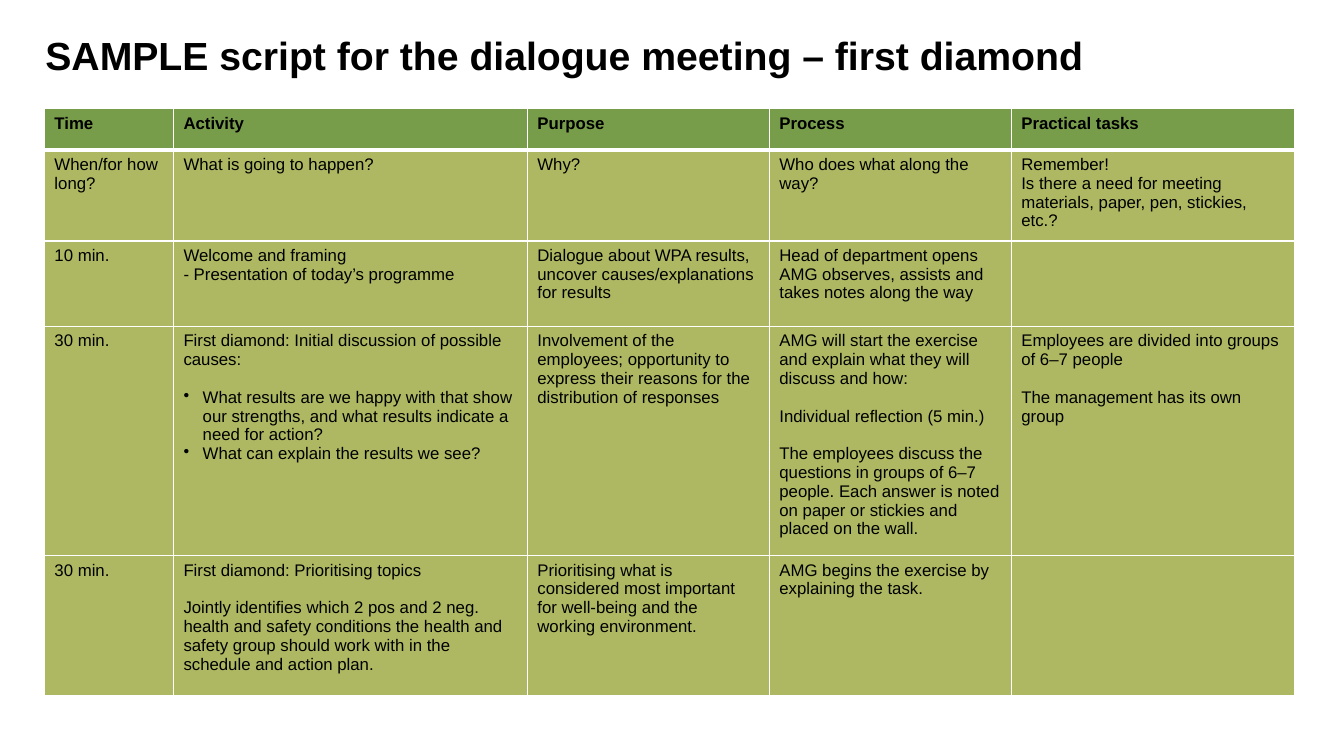
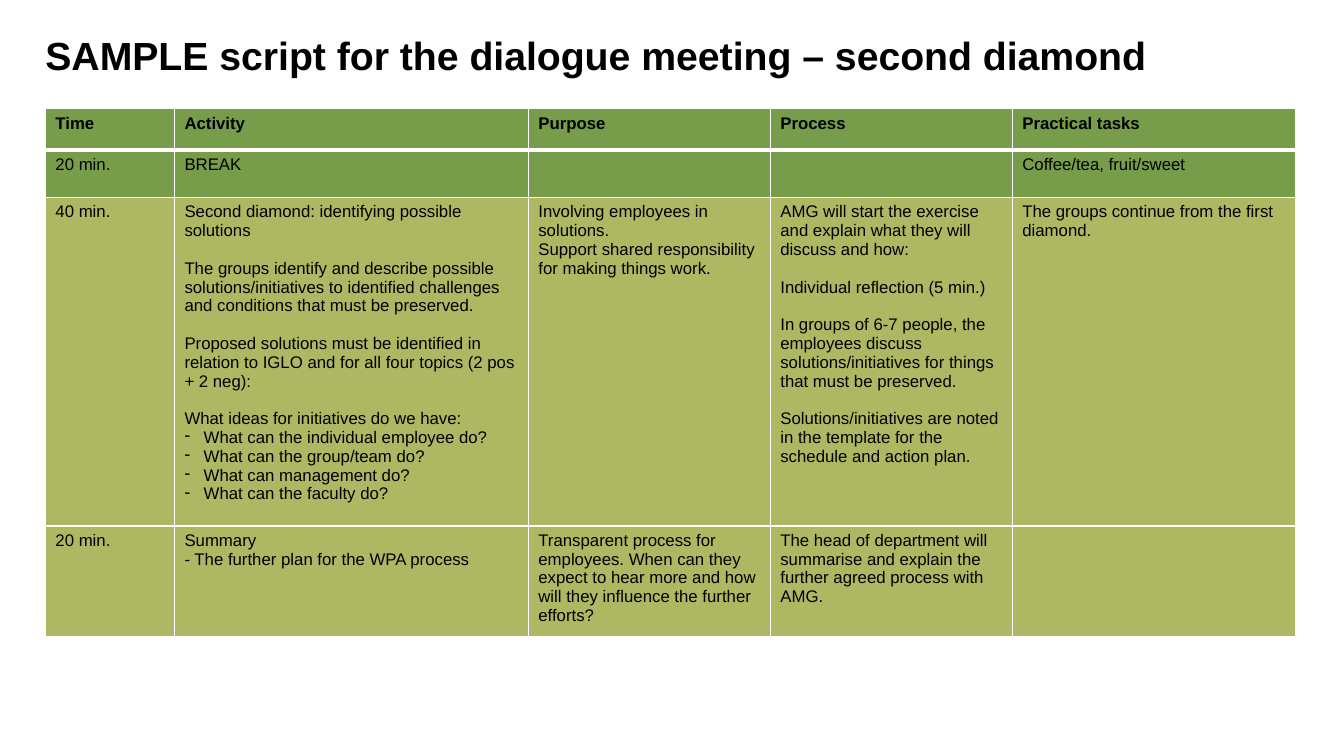
from dataclasses import dataclass

from lxml.etree import SubElement
from pptx import Presentation
from pptx.dml.color import RGBColor as Color
from pptx.enum.text import MSO_ANCHOR as Anchor
from pptx.oxml.ns import qn
from pptx.util import Inches, Pt


@dataclass(frozen=True)
class Theme:
    font: str = "Arial"
    text: str = "000000"
    border: str = "FFFFFF"
    dark_green: str = "789D4A"
    light_green: str = "AEB862"
    title_size: int = 28
    cell_size: int = 12
    paragraph_gap: float = 13.4
    thin_border: int = 1
    thick_border: int = 3


theme = Theme()


def format_runs(paragraph, size, bold):
    for run in paragraph.runs:
        run.font.name = theme.font
        run.font.size = Pt(size)
        run.font.bold = bold
        run.font.color.rgb = Color.from_string(theme.text)


def fill_cell(cell, content, bold):
    first = True
    for block in content.split("\n\n"):
        for index, line in enumerate(block.split("\n")):
            paragraph = cell.text_frame.paragraphs[0] if first else cell.text_frame.add_paragraph()
            if index == 0 and not first:
                paragraph.space_before = Pt(theme.paragraph_gap)
            first = False
            bullet, tab, text = line.rpartition("\t")
            if bullet:
                properties = paragraph._p.get_or_add_pPr()
                properties.set("marL", str(Inches(0.19)))
                properties.set("indent", str(-Inches(0.19)))
                SubElement(properties, qn("a:buChar"), char=bullet)
            paragraph.text = text
            format_runs(paragraph, theme.cell_size, bold)


HEADERS = ["Time", "Activity", "Purpose", "Process", "Practical tasks"]
COLUMN_WIDTHS = [1.28, 3.51, 2.4, 2.4, 2.81]
HEADER_HEIGHT = 0.41
EXERCISE_START = (
    "AMG will start the exercise and explain what they will discuss and how:\n\n"
    "Individual reflection (5 min.)\n\n"
)

meeting_parts = [
    {
        "name": "first diamond",
        "left": 0.44,
        "heights": [0.84, 0.85, 2.15, 1.39],
        "dark_rows": {0},
        "rows": [
            [
                "When/for how long?",
                "What is going to happen?",
                "Why?",
                "Who does what along the way?",
                "Remember!\nIs there a need for meeting materials, paper, pen, stickies, etc.?",
            ],
            [
                "10 min.",
                "Welcome and framing\n- Presentation of today’s programme",
                "Dialogue about WPA results, uncover causes/explanations for results",
                "Head of department opens\nAMG observes, assists and takes notes along the way",
                "",
            ],
            [
                "30 min.",
                "First diamond: Initial discussion of possible causes:\n\n"
                "•\tWhat results are we happy with that show our strengths, "
                "and what results indicate a need for action?\n"
                "•\tWhat can explain the results we see?",
                "Involvement of the employees; opportunity to express their reasons "
                "for the distribution of responses",
                EXERCISE_START + "The employees discuss the questions in groups of 6–7 people. "
                "Each answer is noted on paper or stickies and placed on the wall.",
                "Employees are divided into groups of 6–7 people\n\n"
                "The management has its own group",
            ],
            [
                "30 min.",
                "First diamond: Prioritising topics\n\n"
                "Jointly identifies which 2 pos and 2 neg. health and safety conditions "
                "the health and safety group should work with in the schedule and action plan.",
                "Prioritising what is considered most important for well-being "
                "and the working environment.",
                "AMG begins the exercise by explaining the task.",
                "",
            ],
        ],
    },
    {
        "name": "second diamond",
        "left": 0.45,
        "heights": [0.47, 3.09, 1.03],
        "dark_rows": {0, 1},
        "rows": [
            ["20 min.", "BREAK", "", "", "Coffee/tea, fruit/sweet"],
            [
                "40 min.",
                "Second diamond: identifying possible solutions\n\n"
                "The groups identify and describe possible solutions/initiatives "
                "to identified challenges and conditions that must be preserved.\n\n"
                "Proposed solutions must be identified in relation to IGLO "
                "and for all four topics (2 pos + 2 neg):\n\n"
                "What ideas for initiatives do we have:\n"
                "-\tWhat can the individual employee do?\n"
                "-\tWhat can the group/team do?\n"
                "-\tWhat can management do?\n"
                "-\tWhat can the faculty do?",
                "Involving employees in solutions.\n"
                "Support shared responsibility for making things work.",
                EXERCISE_START + "In groups of 6-7 people, the employees discuss "
                "solutions/initiatives for things that must be preserved.\n\n"
                "Solutions/initiatives are noted in the template "
                "for the schedule and action plan.",
                "The groups continue from the first diamond.",
            ],
            [
                "20 min.",
                "Summary\n- The further plan for the WPA process",
                "Transparent process for employees. When can they expect to hear more "
                "and how will they influence the further efforts?",
                "The head of department will summarise and explain "
                "the further agreed process with AMG.",
                "",
            ],
        ],
    },
]

presentation = Presentation()
presentation.slide_width = Inches(13.33)
presentation.slide_height = Inches(7.5)

for part in meeting_parts:
    slide = presentation.slides.add_slide(presentation.slide_layouts[6])

    title = slide.shapes.add_textbox(Inches(0.45), Inches(0.34), Inches(11.99), Inches(0.73))
    frame = title.text_frame
    frame.word_wrap = True
    frame.vertical_anchor = Anchor.TOP
    frame.margin_left = frame.margin_right = frame.margin_top = frame.margin_bottom = 0
    frame.text = f"SAMPLE script for the dialogue meeting – {part['name']}"
    frame.paragraphs[0].line_spacing = 0.97
    format_runs(frame.paragraphs[0], theme.title_size, True)

    rows = [HEADERS] + part["rows"]
    heights = [HEADER_HEIGHT] + part["heights"]
    table = slide.shapes.add_table(
        len(rows), len(HEADERS), Inches(part["left"]), Inches(1.08),
        Inches(sum(COLUMN_WIDTHS)), Inches(sum(heights)),
    ).table
    table.horz_banding = False
    for column, width in zip(table.columns, COLUMN_WIDTHS):
        column.width = Inches(width)

    for row_index, contents in enumerate(rows):
        table.rows[row_index].height = Inches(heights[row_index])
        thick_side = {0: "lnB", 1: "lnT"}.get(row_index)
        for column_index, content in enumerate(contents):
            cell = table.cell(row_index, column_index)
            fill_cell(cell, content, row_index == 0)
            properties = cell._tc.get_or_add_tcPr()
            for side in ("lnL", "lnR", "lnT", "lnB"):
                width = theme.thick_border if side == thick_side else theme.thin_border
                line = SubElement(properties, qn(f"a:{side}"), w=str(Pt(width)))
                SubElement(SubElement(line, qn("a:solidFill")), qn("a:srgbClr"), val=theme.border)
            cell.fill.solid()
            cell.fill.fore_color.rgb = Color.from_string(
                theme.dark_green if row_index in part["dark_rows"] else theme.light_green
            )

presentation.save("out.pptx")
